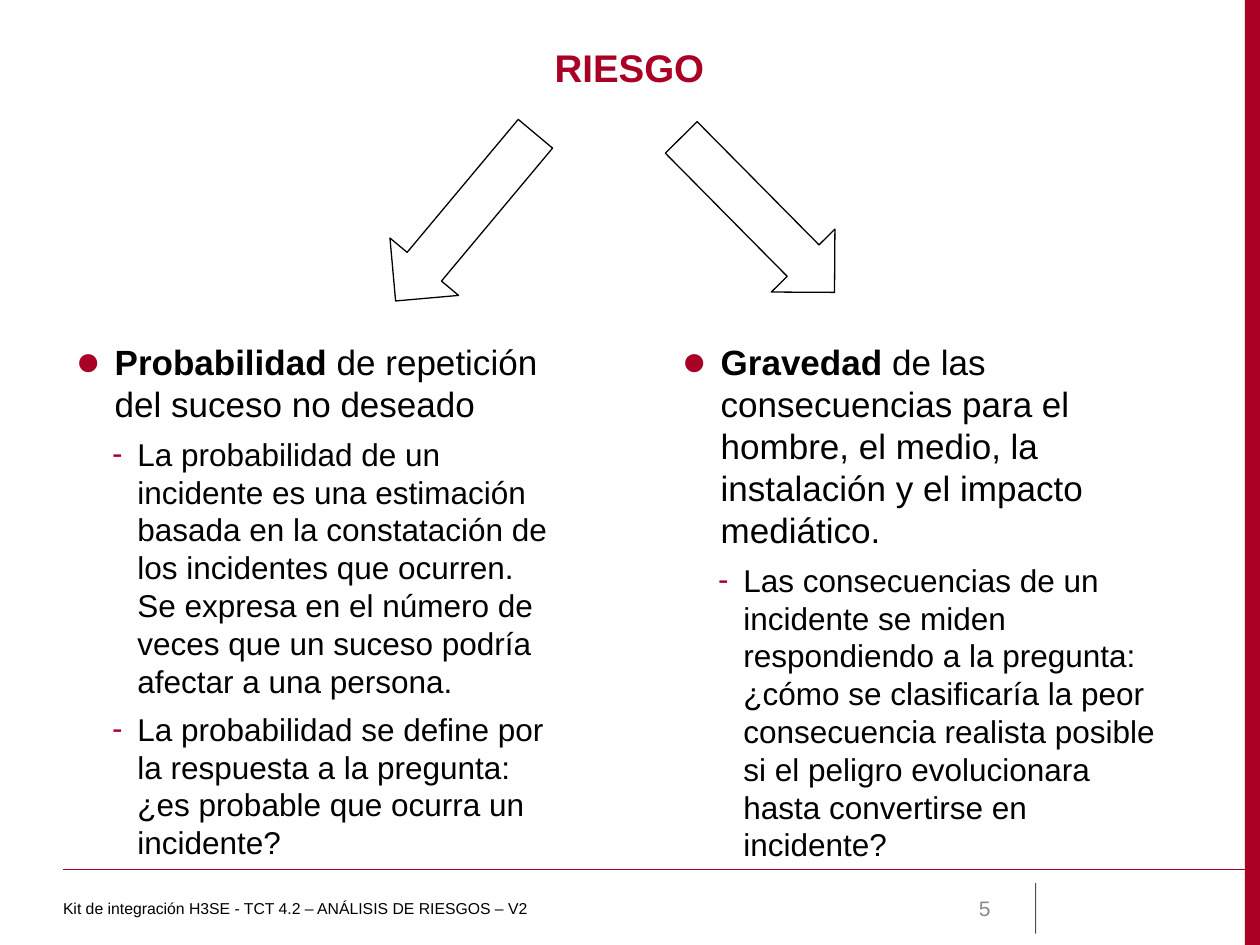
from pptx import Presentation, util as u
from pptx.dml.color import RGBColor
from pptx.enum import dml, shapes, text
from pptx.oxml.ns import qn
from lxml import etree

RED, DARK_RED, BLACK, GREY = "AA0025", "A90025", "000000", "898989"
FONT = "Arial"


def rgb(value):
    return RGBColor.from_string(value)


def add_xml(parent, tag, **attributes):
    return etree.SubElement(parent, qn(tag), attributes)


class RiskSlide:
    def __init__(self, prs):
        self.slide = prs.slides.add_slide(prs.slide_layouts[3])
        self.shapes = self.slide.shapes

    def style(self, paragraph, size, color=BLACK, bold=None):
        font = paragraph.font
        font.name, font.size, font.bold = FONT, u.Pt(size), bold
        font.color.rgb = rgb(color)

    def place(self, item, left, top, width, height):
        item.left, item.top = u.Inches(left), u.Inches(top)
        item.width, item.height = u.Inches(width), u.Inches(height)

    def title(self, wording, *box):
        heading = self.shapes.title
        self.place(heading, *box)
        frame = heading.text_frame
        frame.text = wording
        frame.vertical_anchor = text.MSO_ANCHOR.TOP
        paragraph = frame.paragraphs[0]
        paragraph.alignment = text.PP_ALIGN.CENTER
        self.style(paragraph, 22, DARK_RED, True)

    def bullet(self, paragraph, char, indent, hanging, percent):
        props = paragraph._p.get_or_add_pPr()
        props.set("marL", str(u.Inches(indent)))
        props.set("indent", str(-u.Inches(hanging)))
        add_xml(add_xml(props, "a:buClr"), "a:srgbClr", val=DARK_RED)
        add_xml(props, "a:buSzPct", val=str(percent * 1000))
        add_xml(props, "a:buFont", typeface=FONT)
        add_xml(props, "a:buChar", char=char)

    def factor(self, index, box, term, definition, details):
        """Fill one column: a bold term with its definition, then its details."""
        column = self.slide.placeholders[index]
        self.place(column, *box)
        frame = column.text_frame
        frame.auto_size = text.MSO_AUTO_SIZE.NONE
        main = frame.paragraphs[0]
        main.add_run().text = term
        main.runs[0].font.bold = True
        main.add_run().text = definition
        self.bullet(main, "●", 0.31, 0.31, 120)
        self.style(main, 20)
        for detail in details:
            paragraph = frame.add_paragraph()
            paragraph.text, paragraph.level = detail, 1
            self.bullet(paragraph, "-", 0.49, 0.2, 100)
            self.style(paragraph, 18)
        for paragraph in frame.paragraphs:
            paragraph.space_before = u.Pt(0 if paragraph._p is main._p else 3)
            paragraph.space_after = u.Pt(3)

    def label(self, wording, box, size, color, align, inset=0.1):
        frame = self.shapes.add_textbox(*map(u.Inches, box)).text_frame
        frame.word_wrap = True
        frame.margin_left = u.Inches(inset)
        frame.vertical_anchor = text.MSO_ANCHOR.MIDDLE
        paragraph = frame.paragraphs[0]
        paragraph.text, paragraph.alignment = wording, align
        self.style(paragraph, size, color)

    def band(self, *box):
        edge = self.shapes.add_shape(
            shapes.MSO_SHAPE.RECTANGLE, *map(u.Inches, box))
        edge.shadow.inherit = False
        edge.fill.solid()
        edge.fill.fore_color.rgb = rgb(RED)
        edge.line.fill.background()

    def arrow(self, left, top, rotation):
        arrow = self.shapes.add_shape(
            shapes.MSO_SHAPE.LEFT_ARROW,
            *map(u.Inches, (left, top, 1.73, 0.71)))
        arrow.rotation = rotation
        arrow.shadow.inherit = False
        arrow.fill.background()
        arrow.line.color.rgb = rgb(BLACK)
        arrow.line.width = u.Pt(0.75)

    def rule(self, ends, color, width, opacity=100):
        rule = self.shapes.add_connector(
            shapes.MSO_CONNECTOR.STRAIGHT, *map(u.Inches, ends))
        rule.line.color.rgb = rgb(color)
        rule.line.width = u.Pt(width)
        rule.line.dash_style = dml.MSO_LINE.SOLID
        if opacity < 100:
            tint = rule.line._ln.find(".//" + qn("a:srgbClr"))
            add_xml(tint, "a:alpha", val=str(opacity * 1000))
        add_xml(rule._element.spPr, "a:effectLst")
        rule._element.remove(rule._element.find(qn("p:style")))


def main():
    prs = Presentation()
    prs.slide_width, prs.slide_height = u.Inches(10), u.Inches(7.5)
    risk = RiskSlide(prs)

    risk.band(9.88, 0, 0.12, 7.5)
    risk.rule((0.5, 6.9, 10, 6.9), RED, 0.75)
    risk.rule((8.22, 7.01, 8.22, 7.41), BLACK, 0.5, opacity=70)

    risk.title("RIESGO", 0.5, 0.3, 8.99, 0.69)
    risk.factor(
        1, (0.5, 2.65, 4.03, 3.94),
        "Probabilidad", " de repetición del suceso no deseado",
        ["La probabilidad de un incidente es una estimación basada en la "
         "constatación de los incidentes que ocurren. Se expresa en el número "
         "de veces que un suceso podría afectar a una persona.",
         "La probabilidad se define por la respuesta a la pregunta: "
         "¿es probable que ocurra un incidente?"])
    risk.factor(
        2, (5.31, 2.65, 4.03, 3.94),
        "Gravedad", " de las consecuencias para el hombre, el medio, "
        "la instalación y el impacto mediático.",
        ["Las consecuencias de un incidente se miden respondiendo a la "
         "pregunta: ¿cómo se clasificaría la peor consecuencia realista "
         "posible si el peligro evolucionara hasta convertirse en incidente?"])

    risk.arrow(2.83, 1.37, 309.9)
    risk.arrow(5.15, 1.35, 225.3)

    risk.label("5", (7.17, 7.01, 0.79, 0.4), 12, GREY, text.PP_ALIGN.RIGHT)
    risk.label("Kit de integración H3SE - TCT 4.2 – ANÁLISIS DE RIESGOS – V2",
               (0.5, 7.01, 6.08, 0.4), 9, BLACK, text.PP_ALIGN.LEFT, inset=0)

    prs.save("out.pptx")


if __name__ == "__main__":
    main()
